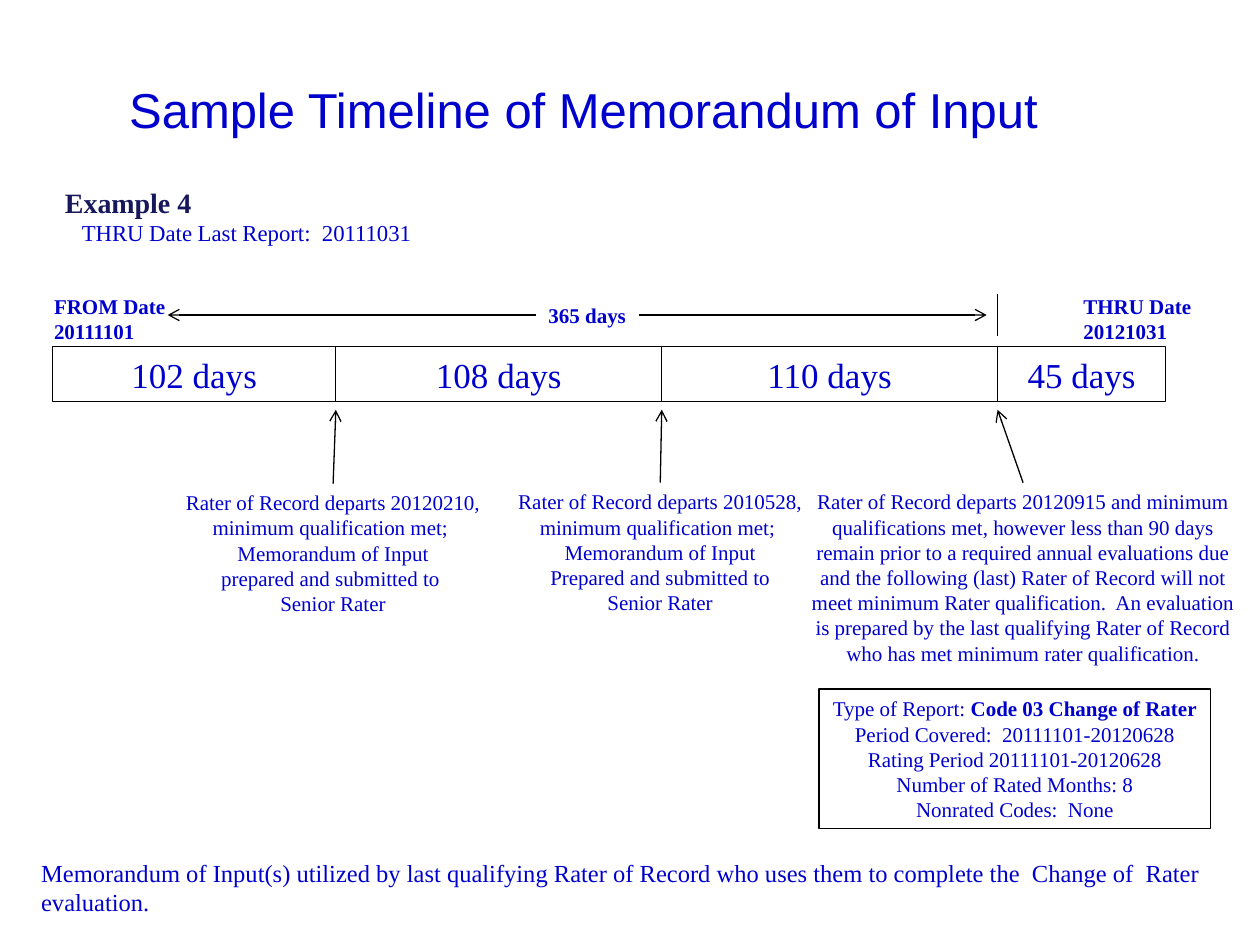
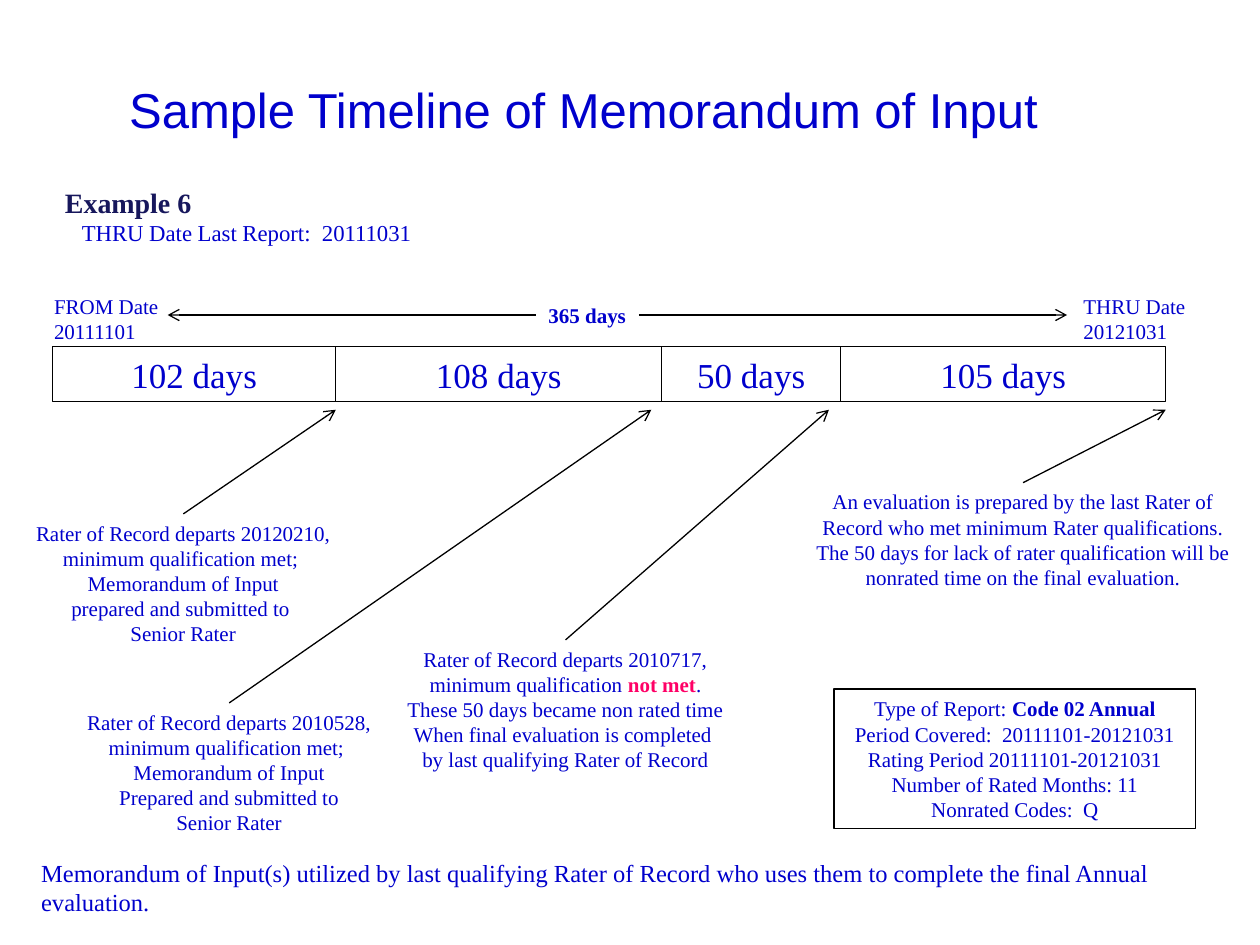
from itertools import pairwise

from pptx import Presentation
from pptx.dml.color import RGBColor
from pptx.enum.shapes import MSO_CONNECTOR, MSO_SHAPE
from pptx.enum.text import PP_ALIGN
from pptx.oxml.ns import qn
from pptx.oxml.xmlchemy import OxmlElement
from pptx.util import Cm, Pt

COLORS = {"text": "0000CC", "heading": "17175C", "alert": "FF0066", "line": "000000"}
SERIF = "Times New Roman"
TOP_SIDE, LEFT_SIDE, RIGHT_SIDE = 0, 1, 3
BAR_TOP, BAR_HEIGHT = 6.99, 1.11
SPAN_Y = 6.35
ARROW_TIP_Y = 8.26
NOTE_HEIGHT = 2.82
REPORT_CENTER = 20.46

DEPARTURE_1 = [
    "Rater of Record departs 20120210,",
    "minimum qualification met; ",
    "Memorandum of Input",
    "prepared and submitted to ",
    "Senior Rater",
]
DEPARTURE_2 = [
    "Rater of Record departs 2010528,",
    "minimum qualification met; ",
    "Memorandum of Input",
    "Prepared and submitted to",
    "Senior Rater",
]
DEPARTURE_3 = [
    "Rater of Record departs 2010717,",
    [("minimum qualification ", None), ("not met", "alert"), (".", None)],
    "These 50 days became non rated time",
    "When final evaluation is completed ",
    "by last qualifying Rater of Record",
]

EXAMPLES = [
    {
        "name": "Example 4",
        "bold_dates": True,
        "edges": [1.06, 6.77, 13.34, 20.11, 23.5],
        "days": [102, 108, 110, 45],
        "span_end": 19.89,
        "tick": 20.11,
        "notes": [
            ((3.45, 9.75, 6.53, NOTE_HEIGHT), 6.77, DEPARTURE_1),
            ((10.16, 9.73, 6.3, NOTE_HEIGHT), 13.34, DEPARTURE_2),
            ((16.08, 9.73, 9.09, 3.84), 20.11, [
                "Rater of Record departs 20120915 and minimum qualifications met, "
                "however less than 90 days remain prior to a required annual "
                "evaluations due and the following (last) Rater of Record will not "
                "meet minimum Rater qualification.  An evaluation is prepared by the "
                "last qualifying Rater of Record who has met minimum rater "
                "qualification."]),
        ],
        "report_width": 7.9,
        "report": ("Code 03 Change of Rater", "20111101-20120628", "8", "None"),
        "footer": [
            "Memorandum of Input(s) utilized by last qualifying Rater of Record who "
            "uses them to complete the  Change of  Rater",
            "evaluation."],
    },
    {
        "name": "Example 6",
        "bold_dates": False,
        "edges": [1.06, 6.77, 13.34, 16.95, 23.5],
        "days": [102, 108, 50, 105],
        "span_end": 21.51,
        "tick": None,
        "notes": [
            ((0.43, 10.36, 6.53, NOTE_HEIGHT), 6.77, DEPARTURE_1),
            ((1.47, 14.17, 6.3, NOTE_HEIGHT), 13.13, DEPARTURE_2),
            ((7.92, 12.9, 6.96, NOTE_HEIGHT), 16.71, DEPARTURE_3),
            ((16.08, 9.73, 9.09, 2.31), 23.5, [
                "An evaluation is prepared by the last Rater of Record who met "
                "minimum Rater qualifications.",
                "The 50 days for lack of rater qualification will be nonrated time "
                "on the final evaluation."]),
        ],
        "report_width": 7.29,
        "report": ("Code 02 Annual", "20111101-20121031", "11", "Q"),
        "footer": [
            "Memorandum of Input(s) utilized by last qualifying Rater of Record who "
            "uses them to complete the final Annual evaluation."],
    },
]


def rgb(name):
    """Return the named colour."""
    return RGBColor.from_string(COLORS[name])


def format_run(run, size, color="text", bold=False, font=SERIF):
    """Set the font of one run."""
    run.font.name = font
    run.font.size = Pt(size)
    run.font.bold = bold
    run.font.color.rgb = rgb(color)


def write_text(shape, paragraphs, size, align=PP_ALIGN.LEFT, bold=False, font=SERIF, wrap=True):
    """Write paragraphs, each a string or a list of (text, emphasis colour) runs."""
    frame = shape.text_frame
    frame.word_wrap = wrap
    for index, content in enumerate(paragraphs):
        paragraph = frame.add_paragraph() if index else frame.paragraphs[0]
        paragraph.alignment = align
        parts = [(content, None)] if isinstance(content, str) else content
        for text, emphasis in parts:
            run = paragraph.add_run()
            run.text = text
            format_run(run, size, emphasis or "text", bold or bool(emphasis), font)


def add_text(slide, box, paragraphs, size, **style):
    """Add a text box and return it."""
    shape = slide.shapes.add_textbox(*map(Cm, box))
    write_text(shape, paragraphs, size, **style)
    return shape


def add_box(slide, box, paragraphs, size):
    """Add an unfilled, outlined rectangle with centred text."""
    shape = slide.shapes.add_shape(MSO_SHAPE.RECTANGLE, *map(Cm, box))
    shape.shadow.inherit = False
    shape.fill.background()
    shape.line.color.rgb = rgb("line")
    shape.line.width = Pt(0.75)
    write_text(shape, paragraphs, size, align=PP_ALIGN.CENTER)


def add_line(slide, start, end, arrow=False):
    """Add a thin straight line, with an open arrowhead at its end if asked."""
    line = slide.shapes.add_connector(MSO_CONNECTOR.STRAIGHT, *map(Cm, start + end))
    line.line.color.rgb = rgb("line")
    line.line.width = Pt(0.75)
    properties = line._element.spPr
    if arrow:
        head = OxmlElement("a:tailEnd")
        head.set("type", "arrow")
        properties.find(qn("a:ln")).append(head)
    properties.append(OxmlElement("a:effectLst"))
    return line


def add_heading(slide, name):
    """Add the slide title, the example name and the last report date."""
    add_text(slide, (0.43, 1.47, 22.66, 1.45), ["Sample Timeline of Memorandum of Input"],
             28, align=PP_ALIGN.CENTER, font="Arial")
    example = add_text(slide, (1.06, 3.61, 9, 1.5),
                       [name, "THRU Date Last Report:  20111031"], 13)
    heading, last_report = example.text_frame.paragraphs
    format_run(heading.runs[0], 16, "heading", True)
    last_report._p.get_or_add_pPr().set("marL", str(Cm(0.34)))


def add_span(slide, end, bold_dates):
    """Add the two dates and the arrows that mark the whole year."""
    for left, dates in ((0.84, ["FROM Date", "20111101"]), (21.59, ["THRU Date", "20121031"])):
        add_text(slide, (left, 5.79, 2.97, 1.27), dates, 12, bold=bold_dates)
    left, width = 10.8, 2.08
    label = add_text(slide, (left, 5.98, width, 0.74), ["365 days"], 12,
                     align=PP_ALIGN.CENTER, bold=True, wrap=False)
    for side, start_x, end_x in ((LEFT_SIDE, left, 3.38), (RIGHT_SIDE, left + width, end)):
        arrow = add_line(slide, (start_x, SPAN_Y), (end_x, SPAN_Y), arrow=True)
        arrow.begin_connect(label, side)


def add_bar(slide, edges, days):
    """Add the row of periods between the given edges."""
    for (left, right), count in zip(pairwise(edges), days):
        add_box(slide, (left, BAR_TOP, right - left, BAR_HEIGHT), [f"{count} days"], 20)


def add_note(slide, box, tip_x, paragraphs):
    """Add a note and an arrow from its top to the bar."""
    left, top, width, _ = box
    note = add_text(slide, box, paragraphs, 12, align=PP_ALIGN.CENTER)
    arrow = add_line(slide, (left + width / 2, top), (tip_x, ARROW_TIP_Y), arrow=True)
    arrow.begin_connect(note, TOP_SIDE)


def add_report(slide, width, code, period, months, nonrated):
    """Add the box that sums up the report."""
    lines = [
        [("Type of Report: ", None), (code, "text")],
        f"Period Covered:  {period}",
        f"Rating Period {period}",
        f"Number of Rated Months: {months}",
        f"Nonrated Codes:  {nonrated}",
    ]
    add_box(slide, (REPORT_CENTER - width / 2, 13.89, width, NOTE_HEIGHT), lines, 12)


def add_example(presentation, example):
    """Add the slide of one example."""
    slide = presentation.slides.add_slide(presentation.slide_layouts[6])
    add_heading(slide, example["name"])
    add_span(slide, example["span_end"], example["bold_dates"])
    add_bar(slide, example["edges"], example["days"])
    if example["tick"]:
        add_line(slide, (example["tick"], 6.78), (example["tick"], 5.92))
    for note in example["notes"]:
        add_note(slide, *note)
    add_report(slide, example["report_width"], *example["report"])
    add_text(slide, (0.58, 17.17, 24.2, 1.45), example["footer"], 14)


def main():
    """Build and save the presentation."""
    presentation = Presentation()
    presentation.slide_width, presentation.slide_height = Cm(25.4), Cm(19.05)
    for example in EXAMPLES:
        add_example(presentation, example)
    presentation.save("out.pptx")


if __name__ == "__main__":
    main()
